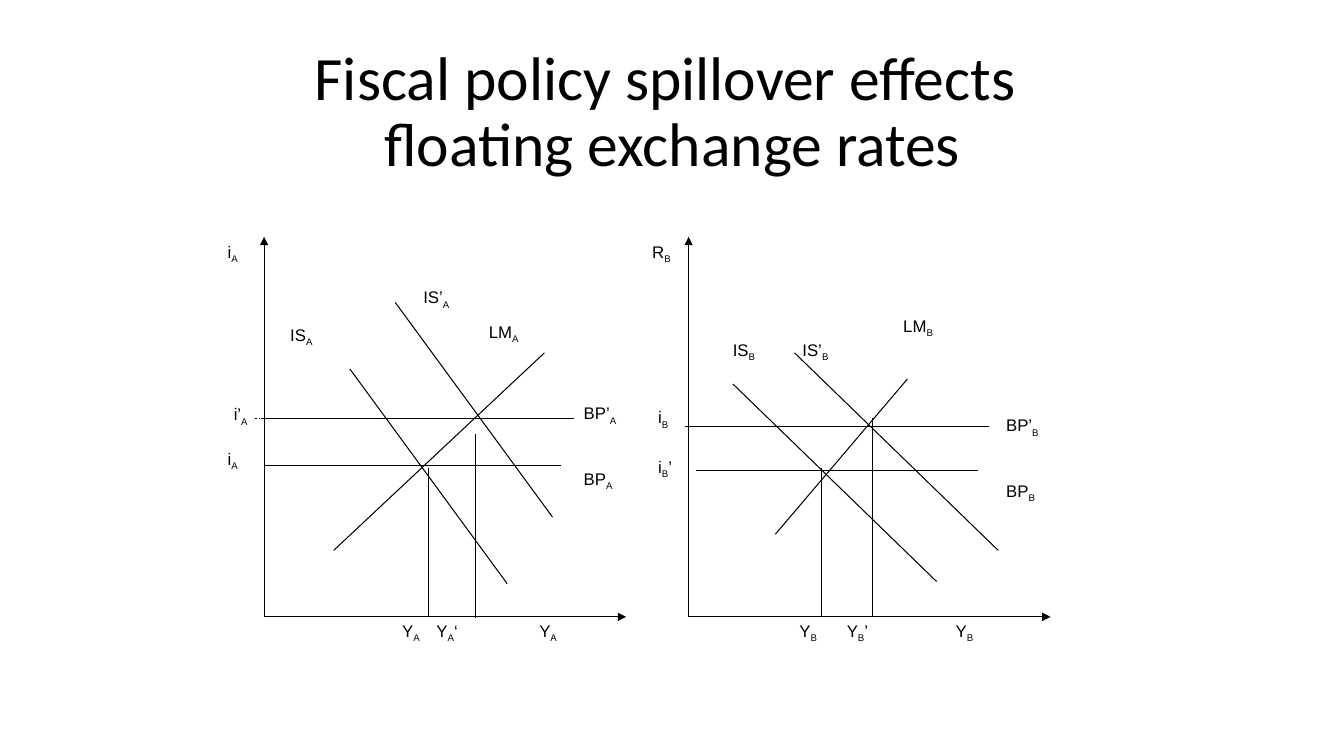
import pptx
import pptx.util
from pptx.dml.color import RGBColor
from pptx.enum.dml import MSO_LINE
from pptx.enum.shapes import MSO_CONNECTOR
from pptx.enum.text import MSO_ANCHOR, PP_ALIGN
from pptx.oxml.ns import qn
from pptx.util import Inches, Pt
from lxml import etree

BLACK = RGBColor(0, 0, 0)
WHITE = RGBColor(255, 255, 255)

TITLE_LINES = ["Fiscal policy spillover effects ", "floating exchange rates"]

AXIS_Y = 6.12
AXIS_TOP = 2.35
AXIS_LENGTH = 3.59
LABEL_WIDTH, LABEL_HEIGHT = 0.75, 0.3

# Labels: left, top, text, subscript, text after the subscript
# Curves: start x, start y, end x, end y
# Drops: x, top of the dotted line down to the axis
COUNTRIES = [
    {
        "origin": 2.62,
        "labels": [
            (2.16, 2.35, "i", "A", ""),
            (2.22, 3.96, "i’", "A", ""),
            (2.16, 4.40, "i", "A", ""),
            (2.78, 3.17, "IS", "A", ""),
            (4.10, 2.80, "IS’", "A", ""),
            (4.75, 3.14, "LM", "A", ""),
            (5.69, 3.95, "BP’", "A", ""),
            (5.69, 4.60, "BP", "A", ""),
            (3.89, 6.11, "Y", "A", ""),
            (4.23, 6.11, "Y", "A", "‘"),
            (5.25, 6.11, "Y", "A", ""),
        ],
        "curves": [
            (3.47, 3.66, 5.03, 5.79),
            (3.92, 3.00, 5.48, 5.13),
            (3.31, 5.46, 5.40, 3.50),
            (2.63, 4.62, 5.56, 4.62),
            (2.60, 4.15, 5.69, 4.15),
        ],
        "drops": [(4.25, 4.64), (4.71, 4.31)],
    },
    {
        "origin": 6.83,
        "labels": [
            (6.37, 2.35, "R", "B", ""),
            (6.43, 3.99, "i", "B", ""),
            (6.43, 4.48, "i", "B", "’"),
            (7.17, 3.32, "IS", "B", ""),
            (7.86, 3.32, "IS’", "B", ""),
            (8.86, 3.08, "LM", "B", ""),
            (9.88, 4.07, "BP’", "B", ""),
            (9.88, 4.72, "BP", "B", ""),
            (7.83, 6.11, "Y", "B", ""),
            (8.30, 6.11, "Y", "B", "’"),
            (9.38, 6.11, "Y", "B", ""),
        ],
        "curves": [
            (7.27, 3.81, 9.29, 5.77),
            (7.88, 3.50, 9.90, 5.46),
            (7.69, 5.30, 9.00, 3.76),
            (6.90, 4.67, 9.70, 4.67),
            (6.79, 4.23, 9.81, 4.23),
        ],
        "drops": [(8.14, 4.64), (8.65, 4.15)],
    },
]
RATE_TICK = (4.56, 4.15, 2.53, 4.15)


def add_run(paragraph, text, font_name, size, baseline=None):
    run = paragraph.add_run()
    run.text = text
    run.font.name = font_name
    run.font.size = Pt(size)
    run.font.color.rgb = BLACK
    if baseline is not None:
        run.font._element.set("baseline", str(baseline))


def add_text_frame(slide, left, top, width, height):
    box = slide.shapes.add_textbox(
        Inches(left), Inches(top), Inches(width), Inches(height))
    box.text_frame.word_wrap = True
    return box.text_frame


def add_title(slide):
    frame = add_text_frame(slide, 0.92, 0.4, 11.5, 1.45)
    frame.vertical_anchor = MSO_ANCHOR.MIDDLE
    paragraph = frame.paragraphs[0]
    paragraph.alignment = PP_ALIGN.CENTER
    paragraph.line_spacing = 0.9
    for index, line in enumerate(TITLE_LINES):
        if index:
            paragraph.add_line_break()
        add_run(paragraph, line, "Calibri", 44)


def add_label(slide, left, top, text, subscript, suffix):
    frame = add_text_frame(slide, left, top, LABEL_WIDTH, LABEL_HEIGHT)
    paragraph = frame.paragraphs[0]
    add_run(paragraph, text, "Arial", 12)
    add_run(paragraph, subscript, "Arial", 12, -25000)
    if suffix:
        add_run(paragraph, suffix, "Arial", 12)


def add_line(slide, points, width=0.75, dotted=False, arrow=False):
    connector = slide.shapes.add_connector(
        MSO_CONNECTOR.STRAIGHT, *[Inches(value) for value in points])
    connector.line.color.rgb = BLACK
    connector.line.width = Pt(width)
    if dotted:
        connector.line.dash_style = MSO_LINE.ROUND_DOT
    if arrow:
        line = connector.line._get_or_add_ln()
        etree.SubElement(line, qn("a:tailEnd"), type="triangle")
    etree.SubElement(connector._element.spPr, qn("a:effectLst"))


def add_diagram(slide, country):
    origin = country["origin"]
    for label in country["labels"]:
        add_label(slide, *label)
    add_line(slide, (origin, AXIS_Y, origin + AXIS_LENGTH, AXIS_Y), arrow=True)
    add_line(slide, (origin, AXIS_Y, origin, AXIS_TOP), arrow=True)
    for curve in country["curves"]:
        add_line(slide, curve)
    for x, top in country["drops"]:
        add_line(slide, (x, top, x, AXIS_Y), width=0.25, dotted=True)


def main():
    presentation = pptx.Presentation()
    presentation.slide_width = Inches(13.33)
    presentation.slide_height = Inches(7.5)
    slide = presentation.slides.add_slide(presentation.slide_layouts[6])
    slide.background.fill.solid()
    slide.background.fill.fore_color.rgb = WHITE
    add_title(slide)
    for country in COUNTRIES:
        add_diagram(slide, country)
    add_line(slide, RATE_TICK, dotted=True)
    presentation.save("out.pptx")


if __name__ == "__main__":
    main()
